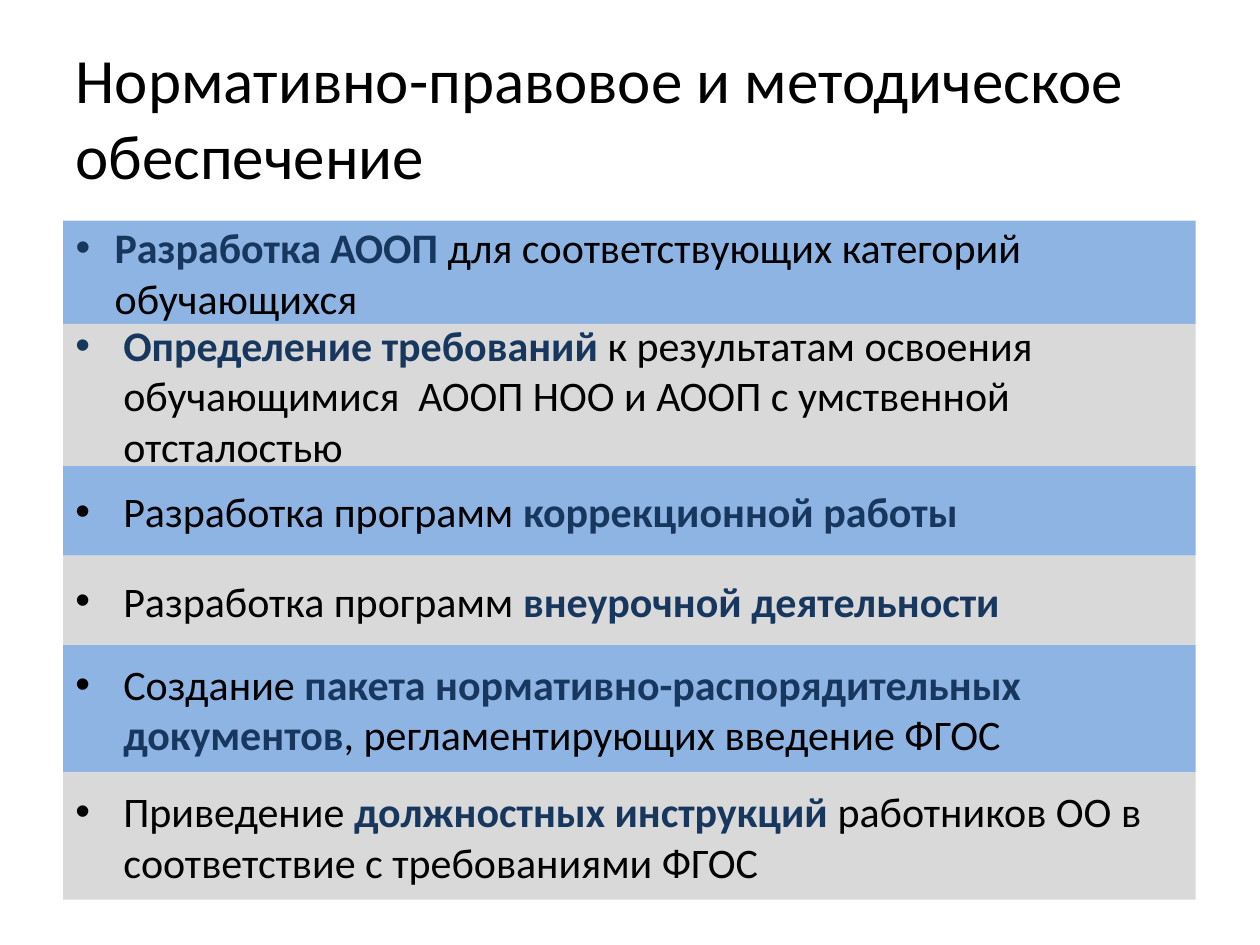
"""Build the slide on regulatory and methodological support as a banded list."""
from dataclasses import dataclass
from itertools import accumulate, cycle

from lxml.etree import SubElement
from pptx import Presentation
from pptx.dml.color import RGBColor
from pptx.enum.shapes import MSO_SHAPE as Preset
from pptx.enum.text import MSO_ANCHOR as Anchor, MSO_AUTO_SIZE as AutoSize, PP_ALIGN as Align
from pptx.oxml.ns import qn
from pptx.slide import Slide
from pptx.text.text import TextFrame, _Paragraph as Paragraph
from pptx.util import Emu, Pt

EMU_PER_PX = 9144


@dataclass(frozen=True)
class Theme:
    """Colours, font and type sizes of the slide."""
    font: str = "Calibri"
    title_size: int = 36
    body_size: int = 24
    text: RGBColor = RGBColor(0x00, 0x00, 0x00)
    accent: RGBColor = RGBColor(0x17, 0x37, 0x5E)
    blue: RGBColor = RGBColor(0x8E, 0xB4, 0xE3)
    grey: RGBColor = RGBColor(0xD9, 0xD9, 0xD9)


@dataclass(frozen=True)
class Phrase:
    """A stretch of text, plain or emphasised."""
    text: str
    strong: bool = False


@dataclass(frozen=True)
class Band:
    """One row of the list with its height and bullet indent in px."""
    height: int
    phrases: tuple[Phrase, ...]
    indent: int = 38


THEME = Theme()
LEFT, WIDTH, LIST_TOP = 50, 899, 175
TITLE = "Нормативно-правовое и методическое обеспечение"
BANDS = (
    Band(82, (Phrase("Разработка АООП ", True),
              Phrase("для соответствующих категорий обучающихся")), indent=31),
    Band(113, (Phrase("Определение требований ", True),
               Phrase("к результатам освоения обучающимися  АООП НОО и АООП с умственной отсталостью"))),
    Band(71, (Phrase("Разработка программ "), Phrase("коррекционной работы", True))),
    Band(71, (Phrase("Разработка программ "), Phrase("внеурочной деятельности", True))),
    Band(101, (Phrase("Создание "),
               Phrase("пакета нормативно-распорядительных документов", True),
               Phrase(", регламентирующих введение ФГОС"))),
    Band(101, (Phrase("Приведение "), Phrase("должностных инструкций ", True),
               Phrase("работников ОО в соответствие с требованиями ФГОС"))),
)


def px(value: int) -> Emu:
    """Turn px into EMU."""
    return Emu(value * EMU_PER_PX)


def place(shape, left: int, top: int, width: int, height: int) -> None:
    """Move and size a shape in px."""
    shape.left, shape.top, shape.width, shape.height = map(px, (left, top, width, height))


def prepare(text_frame: TextFrame) -> Paragraph:
    """Centre the frame vertically and return its left-aligned paragraph."""
    text_frame.auto_size = AutoSize.NONE
    text_frame.word_wrap = True
    text_frame.vertical_anchor = Anchor.MIDDLE
    paragraph = text_frame.paragraphs[0]
    paragraph.alignment = Align.LEFT
    return paragraph


def format_run(run, size: int, strong: bool = False) -> None:
    """Apply the theme font, with the accent for emphasised text."""
    run.font.name = THEME.font
    run.font.size = Pt(size)
    run.font.bold = strong
    run.font.color.rgb = THEME.accent if strong else THEME.text


def add_bullet(paragraph: Paragraph, indent: int) -> None:
    """Give a paragraph a round bullet with a hanging indent."""
    properties = paragraph._p.get_or_add_pPr()
    properties.set("marL", str(px(indent)))
    properties.set("indent", str(-px(indent)))
    SubElement(properties, qn("a:buFont"), typeface="Arial")
    SubElement(properties, qn("a:buChar"), char="•")


def draw_title(slide: Slide) -> None:
    """Fill the title placeholder."""
    title = slide.shapes.title
    place(title, LEFT, 30, 900, 125)
    paragraph = prepare(title.text_frame)
    paragraph.text = TITLE
    format_run(paragraph.runs[0], THEME.title_size)


def draw_band(shape, band: Band, top: int, color: RGBColor) -> None:
    """Turn a shape into a coloured band with one bulleted line."""
    place(shape, LEFT, top, WIDTH, band.height)
    shape.fill.solid()
    shape.fill.fore_color.rgb = color
    shape.line.fill.background()
    paragraph = prepare(shape.text_frame)
    add_bullet(paragraph, band.indent)
    for phrase in band.phrases:
        run = paragraph.add_run()
        run.text = phrase.text
        format_run(run, THEME.body_size, phrase.strong)


def draw_list(slide: Slide) -> None:
    """Stack the bands, the first one in the body placeholder."""
    tops = accumulate((band.height for band in BANDS), initial=LIST_TOP)
    for index, (band, top, color) in enumerate(zip(BANDS, tops, cycle((THEME.blue, THEME.grey)))):
        if index == 0:
            shape = slide.placeholders[1]
        else:
            shape = slide.shapes.add_shape(Preset.RECTANGLE, 0, 0, 0, 0)
            shape.shadow.inherit = False
        draw_band(shape, band, top, color)


def main() -> None:
    """Build and save the presentation."""
    presentation = Presentation()
    presentation.slide_width, presentation.slide_height = px(1000), px(750)
    slide = presentation.slides.add_slide(presentation.slide_layouts[1])
    draw_title(slide)
    draw_list(slide)
    presentation.save("out.pptx")


if __name__ == "__main__":
    main()
